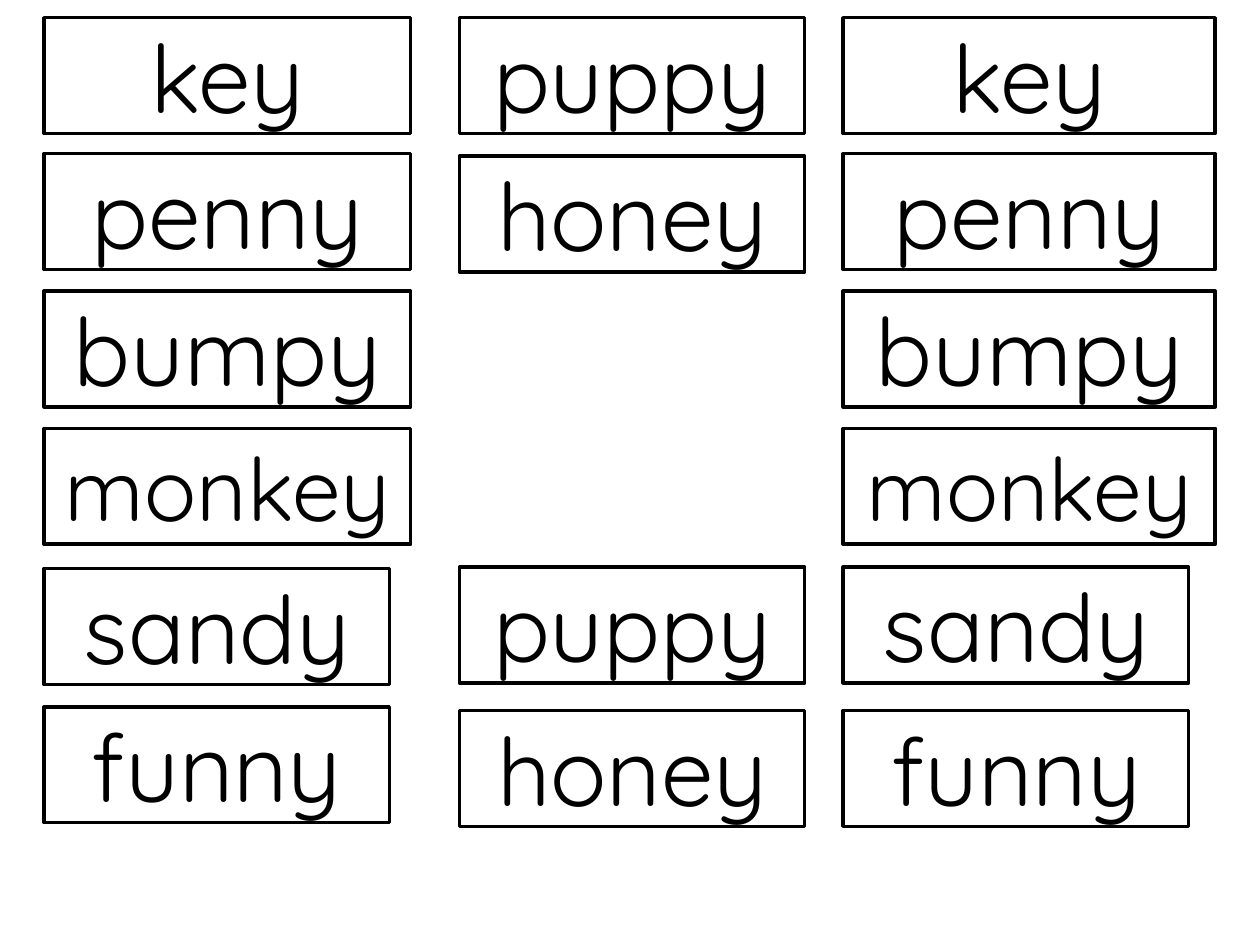
from pptx import Presentation
from pptx.dml.color import RGBColor
from pptx.enum import shapes, text
from pptx.util import Pt

COLOURS = {"ink": "000000", "paper": "FFFFFF"}
CARD_HEIGHT = 66.2
SHORT_WIDTH = 197.3
FONT = {"name": "Quicksand", "size": Pt(54)}
SMALLER_SIZES = {"monkey": Pt(50)}

# Each column: left edge, then its cards as (word, top, width)
COLUMNS = [
    (25.2, [("key", 10.1, 209.5), ("penny", 87.8, 209.5),
            ("bumpy", 166.3, 209.5), ("monkey", 244.8, 209.5),
            ("sandy", 324.9, SHORT_WIDTH), ("funny", 403.9, SHORT_WIDTH)]),
    (262.6, [("puppy", 10.1, SHORT_WIDTH), ("honey", 89.2, SHORT_WIDTH),
             ("puppy", 324, SHORT_WIDTH), ("honey", 406, SHORT_WIDTH)]),
    (481.9, [("key", 10.1, 212.6), ("penny", 87.8, 212.6),
             ("bumpy", 166.3, 212.6), ("monkey", 244.8, 212.6),
             ("sandy", 324, SHORT_WIDTH), ("funny", 406, SHORT_WIDTH)]),
]

deck = Presentation()
deck.slide_width, deck.slide_height = Pt(720), Pt(540)
page = deck.slides.add_slide(deck.slide_layouts[6])
ink = RGBColor.from_string(COLOURS["ink"])
paper = RGBColor.from_string(COLOURS["paper"])

for left, cards in COLUMNS:
    for word, top, width in cards:
        card = page.shapes.add_shape(
            shapes.MSO_SHAPE.RECTANGLE,
            Pt(left), Pt(top), Pt(width), Pt(CARD_HEIGHT))
        card.shadow.inherit = False
        card.fill.solid()
        card.fill.fore_color.rgb = paper
        card.line.color.rgb = ink
        card.line.width = Pt(2)

        card.text_frame.vertical_anchor = text.MSO_ANCHOR.MIDDLE
        para = card.text_frame.paragraphs[0]
        para.alignment = text.PP_ALIGN.CENTER
        span = para.add_run()
        span.text = word
        span.font.color.rgb = ink
        word_font = {**FONT, "size": SMALLER_SIZES.get(word, FONT["size"])}
        for attribute, value in word_font.items():
            setattr(span.font, attribute, value)

deck.save("out.pptx")
